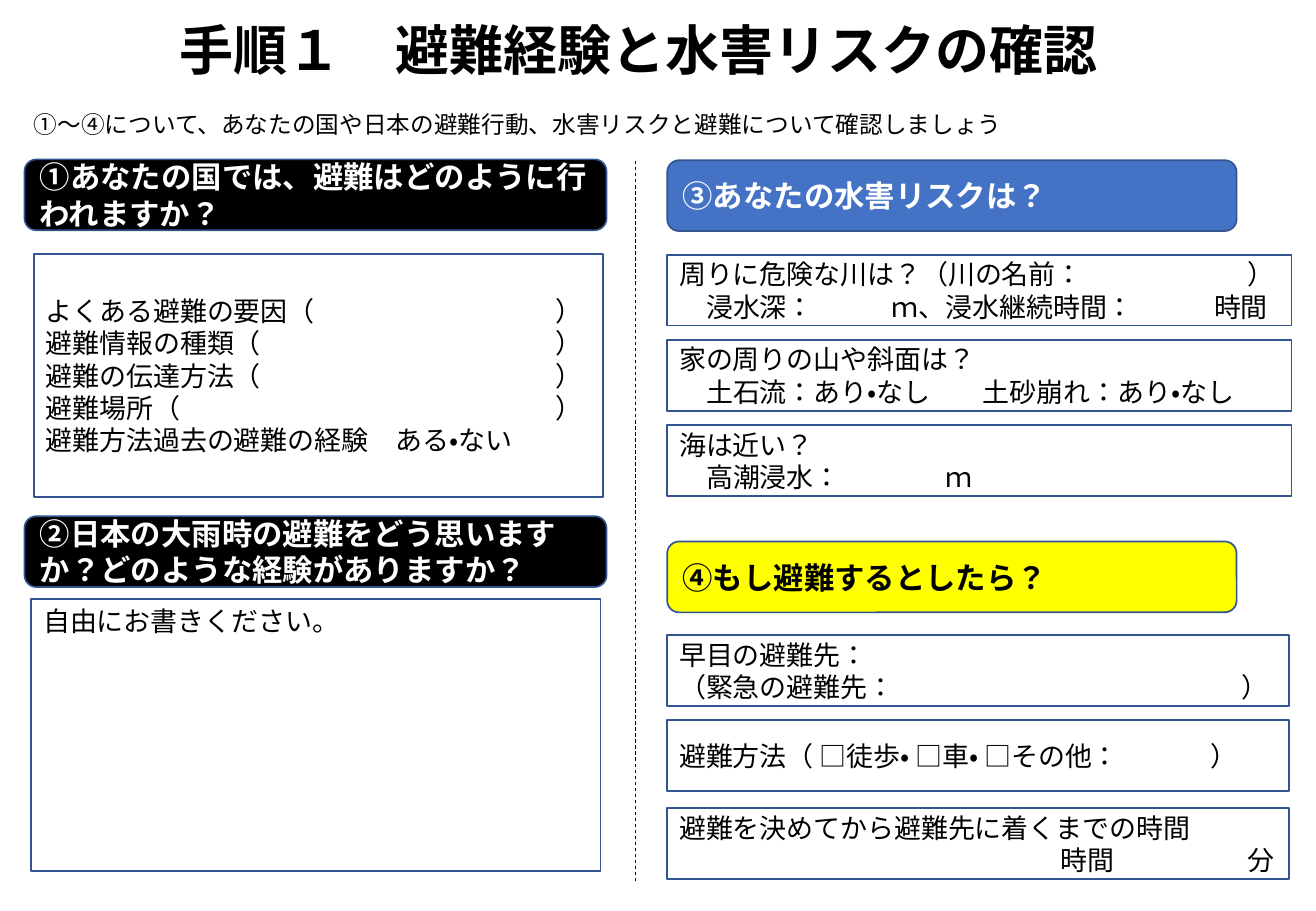
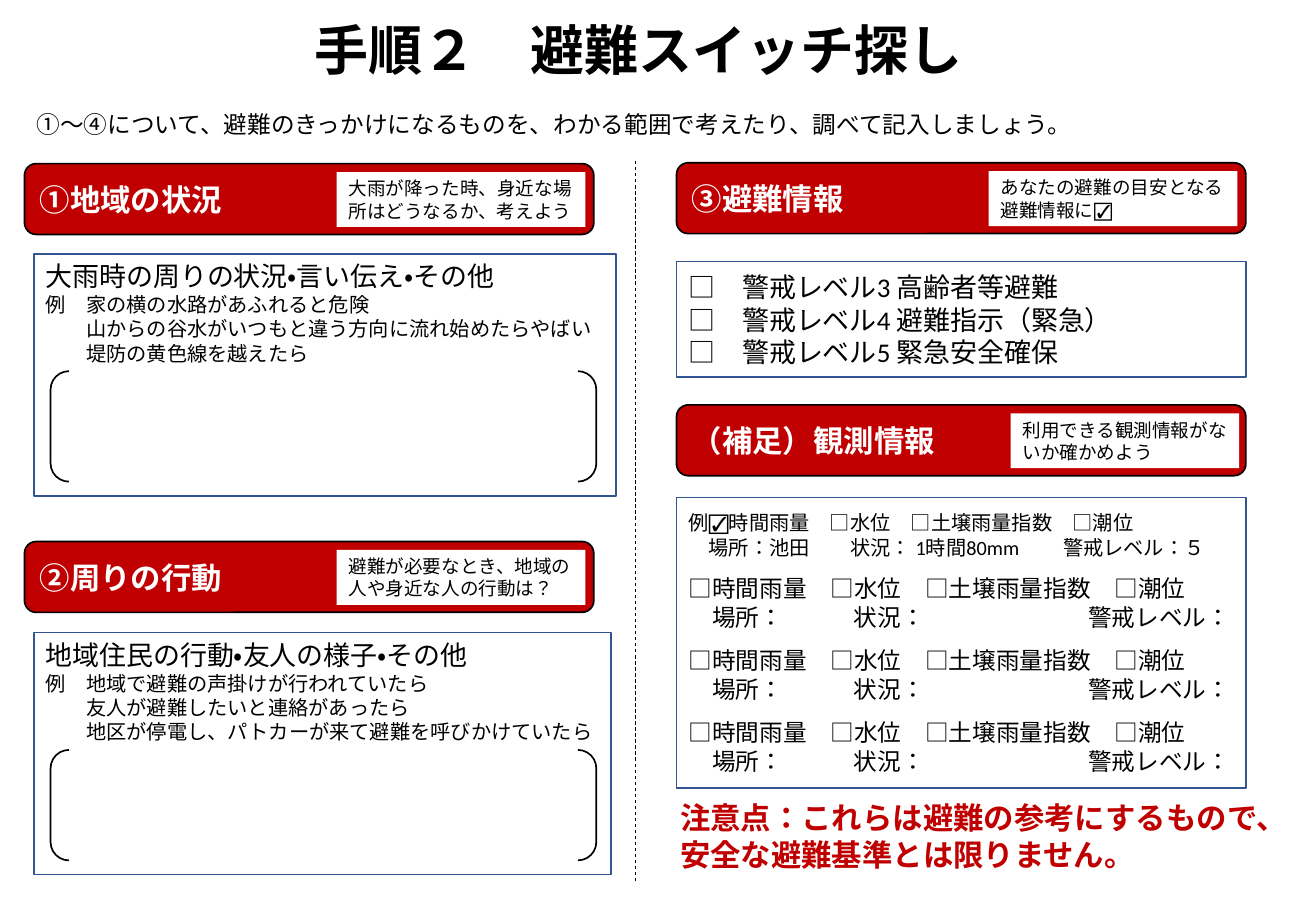
"""Builds two evacuation-planning worksheets, steps 1 and 2."""
from lxml.etree import SubElement
from pptx import Presentation
from pptx.dml.color import RGBColor as RGB
from pptx.enum.dml import MSO_LINE
from pptx.enum.lang import MSO_LANGUAGE_ID as Language
from pptx.enum.shapes import MSO_CONNECTOR, MSO_SHAPE as Preset
from pptx.enum.text import MSO_ANCHOR as Anchor, PP_ALIGN as Align
from pptx.oxml.ns import qn
from pptx.util import Pt

BLACK, WHITE, NAVY = "000000", "FFFFFF", "325491"
RED, BLUE, YELLOW = "C00000", "4472C4", "FFFF00"
HEADER = {"preset": Preset.ROUNDED_RECTANGLE, "size": 18, "bold": True, "color": WHITE, "line": NAVY}
BOX = {"preset": Preset.RECTANGLE, "size": 16, "line": NAVY}
THEME = {
    "font": "Calibri",
    "title": {"size": 32, "bold": True, "align": Align.CENTER},
    "lead": {"preset": Preset.RECTANGLE, "size": 14, "fill": WHITE},
    "black header": HEADER | {"fill": BLACK},
    "blue header": HEADER | {"fill": BLUE},
    "yellow header": HEADER | {"fill": YELLOW, "color": BLACK},
    "red header": HEADER | {"fill": RED, "line": BLACK},
    "hint": {"preset": Preset.RECTANGLE, "size": 11, "fill": WHITE},
    "box": BOX,
    "top box": BOX | {"anchor": Anchor.TOP},
    "bracket": {"preset": Preset.DOUBLE_BRACKET, "line": BLACK},
    "warning": HEADER | {"color": RED, "line": None},
    "example size": 12,
    "entry size": 14,
}


def add_panel(slide, style_name, box, *lines):
    """Adds a styled shape; a line is text or a (text, tab stops, format) tuple."""
    style = THEME[style_name]
    frame_box = [Pt(value) for value in box]
    if "preset" in style:
        shape = slide.shapes.add_shape(style["preset"], *frame_box)
        shape.shadow.inherit = False
    else:
        shape = slide.shapes.add_textbox(*frame_box)
    if style.get("fill"):
        shape.fill.solid()
        shape.fill.fore_color.rgb = RGB.from_string(style["fill"])
    else:
        shape.fill.background()
    if style.get("line"):
        shape.line.color.rgb = RGB.from_string(style["line"])
        shape.line.width = Pt(1)
    else:
        shape.line.fill.background()
    frame = shape.text_frame
    frame.word_wrap = True
    frame.vertical_anchor = style.get("anchor", Anchor.MIDDLE)
    for index, line in enumerate(lines):
        text, stops, extra = (line, (), {}) if isinstance(line, str) else line
        paragraph = frame.add_paragraph() if index else frame.paragraphs[0]
        paragraph.alignment = style.get("align", Align.LEFT)
        if "before" in extra:
            paragraph.space_before = Pt(extra["before"])
        if stops:
            tab_list = SubElement(paragraph._p.get_or_add_pPr(), qn("a:tabLst"))
            for stop in stops:
                SubElement(tab_list, qn("a:tab"), pos=str(Pt(stop)), algn="l")
        run = paragraph.add_run()
        run.text = text
        formats = {
            "name": THEME["font"],
            "size": Pt(extra.get("size", style["size"])),
            "bold": style.get("bold", False),
            "language_id": Language.JAPANESE,
        }
        for name, value in formats.items():
            setattr(run.font, name, value)
        run.font.color.rgb = RGB.from_string(style.get("color", BLACK))


presentation = Presentation()
presentation.slide_width, presentation.slide_height = Pt(780), Pt(540)

slides = []
for title, lead, lead_left in [
    ("手順１　避難経験と水害リスクの確認",
     "①～④について、あなたの国や日本の避難行動、水害リスクと避難について確認しましょう", 13),
    ("手順２　避難スイッチ探し",
     "①～④について、避難のきっかけになるものを、わかる範囲で考えたり、調べて記入しましょう。", 14.5),
]:
    slide = presentation.slides.add_slide(presentation.slide_layouts[6])
    slides.append(slide)
    add_panel(slide, "title", (0, 3.5, 757.5, 51), title)
    add_panel(slide, "lead", (lead_left, 57.5, 750, 32.5), lead)
    divider = slide.shapes.add_connector(MSO_CONNECTOR.STRAIGHT, Pt(376.5), Pt(522.5), Pt(376.5), Pt(94.5))
    divider.line.color.rgb = RGB.from_string(BLACK)
    divider.line.width = Pt(0.5)
    divider.line.dash_style = MSO_LINE.DASH
    SubElement(divider._element.spPr, qn("a:effectLst"))

experience, switches = slides

for style_name, left, top, width, text in [
    ("black header", 14.5, 94.5, 345, "①あなたの国では、避難はどのように行われますか？"),
    ("black header", 14.5, 306, 345, "②日本の大雨時の避難をどう思いますか？どのような経験がありますか？"),
    ("blue header", 395.5, 95, 337.5, "③あなたの水害リスクは？"),
    ("yellow header", 395.5, 321, 337.5, "④もし避難するとしたら？"),
]:
    add_panel(experience, style_name, (left, top, width, 42), text)

add_panel(
    experience, "box", (20, 150.5, 337.5, 144),
    *[(f"{label}（\t）", (302,), {}) for label in
      ("よくある避難の要因", "避難情報の種類", "避難の伝達方法", "避難場所")],
    "避難方法過去の避難の経験　ある・ない",
)
add_panel(experience, "top box", (18.5, 355, 337.5, 161.5), "自由にお書きください。")

for top, width, lines in [
    (151, 370, [("周りに危険な川は？（川の名前：\t）", (337,), {}),
                ("\t浸水深：\tｍ、浸水継続時間：\t時間", (16, 126, 317), {})]),
    (201.5, 370, ["家の周りの山や斜面は？",
                  ("\t土石流：あり・なし\t土砂崩れ：あり・なし", (16, 180), {})]),
    (252, 370, ["海は近い？", ("\t高潮浸水：\tｍ", (16, 158), {})]),
    (376.5, 368.5, ["早目の避難先：", ("（緊急の避難先：\t）", (333,), {})]),
    (427, 368.5, [("避難方法（ □徒歩・ □車・ □その他：\t）", (315,), {})]),
    (479, 368.5, ["避難を決めてから避難先に着くまでの時間",
                  ("\t時間\t分", (226, 337), {})]),
]:
    add_panel(experience, "box", (395.5, top, width, 42), *lines)

for left, top, text, hint_left, hint_width, hint in [
    (14.5, 97, "①地域の状況", 199.5, 147.5, "大雨が降った時、身近な場所はどうなるか、考えよう"),
    (14.5, 321, "②周りの行動", 199.5, 147.5, "避難が必要なとき、地域の人や身近な人の行動は？"),
    (401, 96.5, "③避難情報", 586, 147.5, "あなたの避難の目安となる避難情報に☑"),
    (401, 240, "（補足）観測情報", 599, 135.5, "利用できる観測情報がないか確かめよう"),
]:
    add_panel(switches, "red header", (left, top, 337.5, 42), text)
    add_panel(switches, "hint", (hint_left, top + 5, hint_width, 32.5), hint)

example = {"size": THEME["example size"]}
for top, width, heading, examples in [
    (150.5, 345, "大雨時の周りの状況・言い伝え・その他",
     ("例\t家の横の水路があふれると危険",
      "\t山からの谷水がいつもと違う方向に流れ始めたらやばい",
      "\t堤防の黄色線を越えたら")),
    (375, 342, "地域住民の行動・友人の様子・その他",
     ("例\t地域で避難の声掛けが行われていたら",
      "\t友人が避難したいと連絡があったら",
      "\t地区が停電し、パトカーが来て避難を呼びかけていたら")),
]:
    add_panel(switches, "top box", (20, top, width, 143.5), heading,
              *[(text, (24,), example) for text in examples])
    add_panel(switches, "bracket", (30, top + 69.5, 323.5, 65.5))

add_panel(
    switches, "box", (401, 155, 337.5, 68.5),
    *[f"□　警戒レベル{level} {action}" for level, action in
      ((3, "高齢者等避難"), (4, "避難指示（緊急）"), (5, "緊急安全確保"))],
)

entry = {"size": THEME["entry size"]}
observation_entry = [
    ("□時間雨量　□水位　□土壌雨量指数　□潮位", (), entry | {"before": 9}),
    ("\t場所：\t状況：\t警戒レベル：", (14, 98, 237), entry),
]
add_panel(
    switches, "box", (401, 295, 337.5, 172),
    ("例☑時間雨量　□水位　□土壌雨量指数　□潮位", (), example),
    ("\t場所：池田\t状況： 1時間80mm\t警戒レベル：５", (12, 96, 222), example),
    *observation_entry * 3,
)
add_panel(switches, "warning", (394, 474.5, 366.5, 42),
          "注意点：これらは避難の参考にするもので、安全な避難基準とは限りません。")

presentation.save("out.pptx")
